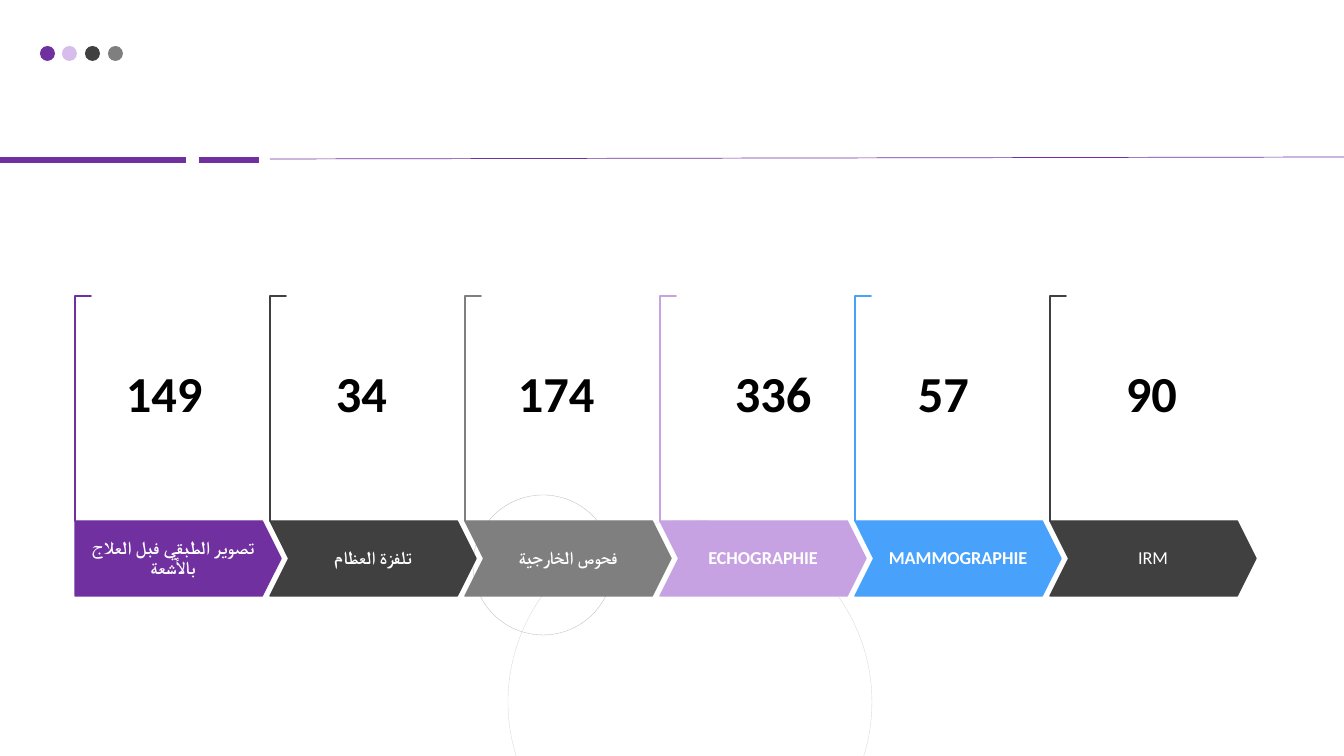
from dataclasses import dataclass

from lxml.etree import SubElement
from pptx import Presentation
from pptx.dml.color import RGBColor
from pptx.enum.shapes import MSO_CONNECTOR, MSO_SHAPE
from pptx.enum.text import MSO_ANCHOR, MSO_AUTO_SIZE, PP_ALIGN
from pptx.oxml.ns import qn
from pptx.util import Emu, Pt

EMU_PER_PX = 914400 / 100.8
SLIDE_W, SLIDE_H = 1344, 756


@dataclass(frozen=True)
class Theme:
    purple: str = "7030A0"
    lilac: str = "C7A2E3"
    dark: str = "404040"
    gray: str = "7F7F7F"
    blue: str = "48A1FA"
    white: str = "FFFFFF"
    black: str = "000000"
    large_ring: str = "D9D9D9"
    small_ring: str = "BFBFBF"
    font: str = "Calibri"
    label_size: int = 13
    count_size: int = 36


THEME = Theme()

# Label, count, colour, left edge of the count, bold label, right-to-left
EXAMS = [
    ("تصوير الطبقي فبل العلاج بالأشعة", "149", THEME.purple, 116, True, False),
    ("تلفزة العظام", "34", THEME.dark, 326, True, False),
    ("فحوص الخارجية", "174", THEME.gray, 508, True, False),
    ("ECHOGRAPHIE", "336", THEME.lilac, 725, True, True),
    ("MAMMOGRAPHIE", "57", THEME.blue, 908, True, False),
    ("IRM", "90", THEME.dark, 1116, False, False),
]


def px(*lengths):
    return [Emu(round(length * EMU_PER_PX)) for length in lengths]


def add_preset(shapes, preset, box, fill=None, line=None, width=1):
    part = shapes.add_shape(preset, *px(*box))
    part.shadow.inherit = False
    if fill:
        part.fill.solid()
        part.fill.fore_color.rgb = RGBColor.from_string(fill)
    else:
        part.fill.background()
    if line:
        part.line.color.rgb = RGBColor.from_string(line)
        part.line.width = Pt(width)
    else:
        part.line.fill.background()
    return part


def add_text(shapes, box, text, size, color, bold):
    holder = shapes.add_textbox(*px(*box))
    frame = holder.text_frame
    frame.word_wrap = True
    frame.text = text
    font = frame.paragraphs[0].runs[0].font
    font.name, font.size, font.bold = THEME.font, Pt(size), bold
    font.color.rgb = RGBColor.from_string(color)
    return frame


def add_rules(shapes, left, top):
    """Two thick dashes and a thin line running to the slide's right edge."""
    for start, end, drop, rise, width in [
        (-3, 186, 0, 0, 4.5),
        (199, 259, 0, 0, 4.5),
        (270, SLIDE_W, -1, -3, 0.5),
    ]:
        rule = shapes.add_connector(
            MSO_CONNECTOR.STRAIGHT,
            *px(left + start, top + drop, left + end, top + rise))
        rule.line.color.rgb = RGBColor.from_string(THEME.purple)
        rule.line.width = Pt(width)
        SubElement(rule.element.spPr, qn("a:effectLst"))


def add_dots(shapes, left, top, size):
    dots = shapes.add_group_shape().shapes
    for offset, color in [(0, THEME.purple), (22, THEME.lilac),
                          (45, THEME.dark), (68, THEME.gray)]:
        dot = add_preset(dots, MSO_SHAPE.OVAL, (left + offset, top, size, size), color)
        if color == THEME.lilac:
            rgb = dot.element.spPr.find(qn("a:solidFill")).find(qn("a:srgbClr"))
            SubElement(rgb, qn("a:alpha"), val="70000")


def add_rings(shapes, left, top):
    add_preset(shapes, MSO_SHAPE.OVAL, (left + 35, top + 25, 364, 364),
               line=THEME.large_ring, width=0.25)
    add_preset(shapes, MSO_SHAPE.OVAL, (left, top, 140, 140),
               line=THEME.small_ring, width=0.25)


def add_bracket(shapes, left, top, width, height, color):
    """A corner turned a quarter so that it fills the given upright box."""
    turned = (left + (width - height) / 2, top + (height - width) / 2, height, width)
    bracket = add_preset(shapes, MSO_SHAPE.CORNER, turned, THEME.white, color)
    bracket.rotation = 90
    bracket.adjustments[0] = bracket.adjustments[1] = 0.01


def add_label(shapes, box, text, bold, rtl):
    frame = add_text(shapes, box, text, THEME.label_size, THEME.white, bold)
    frame.vertical_anchor = MSO_ANCHOR.MIDDLE
    frame.margin_left, frame.margin_top = px(9, 18)
    frame.margin_right, frame.margin_bottom = px(9, 18)
    paragraph = frame.paragraphs[0]
    paragraph.alignment = PP_ALIGN.CENTER
    paragraph.line_spacing = 0.9
    # Arabic script font, percentage spacing and reading direction
    SubElement(paragraph.runs[0]._r.get_or_add_rPr(), qn("a:cs"), typeface=THEME.font)
    settings = paragraph._p.get_or_add_pPr()
    SubElement(SubElement(settings, qn("a:spcAft")), qn("a:spcPct"), val="35000")
    if rtl:
        settings.set("rtl", "1")


def add_exam_chain(shapes, left, top, step, arrow_w, arrow_h):
    """A row of arrows, each carrying a label below its bracket."""
    chain = shapes.add_group_shape().shapes
    bracket_h = 225
    for index, (label, _, color, _, bold, rtl) in enumerate(EXAMS):
        x = left + index * step
        add_bracket(chain, x, top - bracket_h, 16, bracket_h, color)
        first = index == 0
        preset = MSO_SHAPE.PENTAGON if first else MSO_SHAPE.CHEVRON
        arrow = add_preset(chain, preset, (x, top, arrow_w, arrow_h), color, color)
        arrow.adjustments[0] = 0.25
        indent, label_w = (0, 196) if first else (19, 168)
        add_label(chain, (x + indent, top, label_w, arrow_h), label, bold, rtl)


def add_counts(shapes, top, width, height):
    for _, count, _, left, _, _ in EXAMS:
        frame = add_text(shapes, (left, top, width, height), count,
                         THEME.count_size, THEME.black, True)
        frame.auto_size = MSO_AUTO_SIZE.SHAPE_TO_FIT_TEXT


def main():
    deck = Presentation()
    deck.slide_width, deck.slide_height = px(SLIDE_W, SLIDE_H)
    shapes = deck.slides.add_slide(deck.slide_layouts[6]).shapes

    # Header and background decoration
    add_rules(shapes, 0, 160)
    add_dots(shapes, 40, 46, 15)
    add_rings(shapes, 473, 495)

    # Exams and their counts
    add_exam_chain(shapes, 75, 521, 195, 206, 75)
    add_counts(shapes, 357, 116, 72)

    deck.save("out.pptx")


if __name__ == "__main__":
    main()
